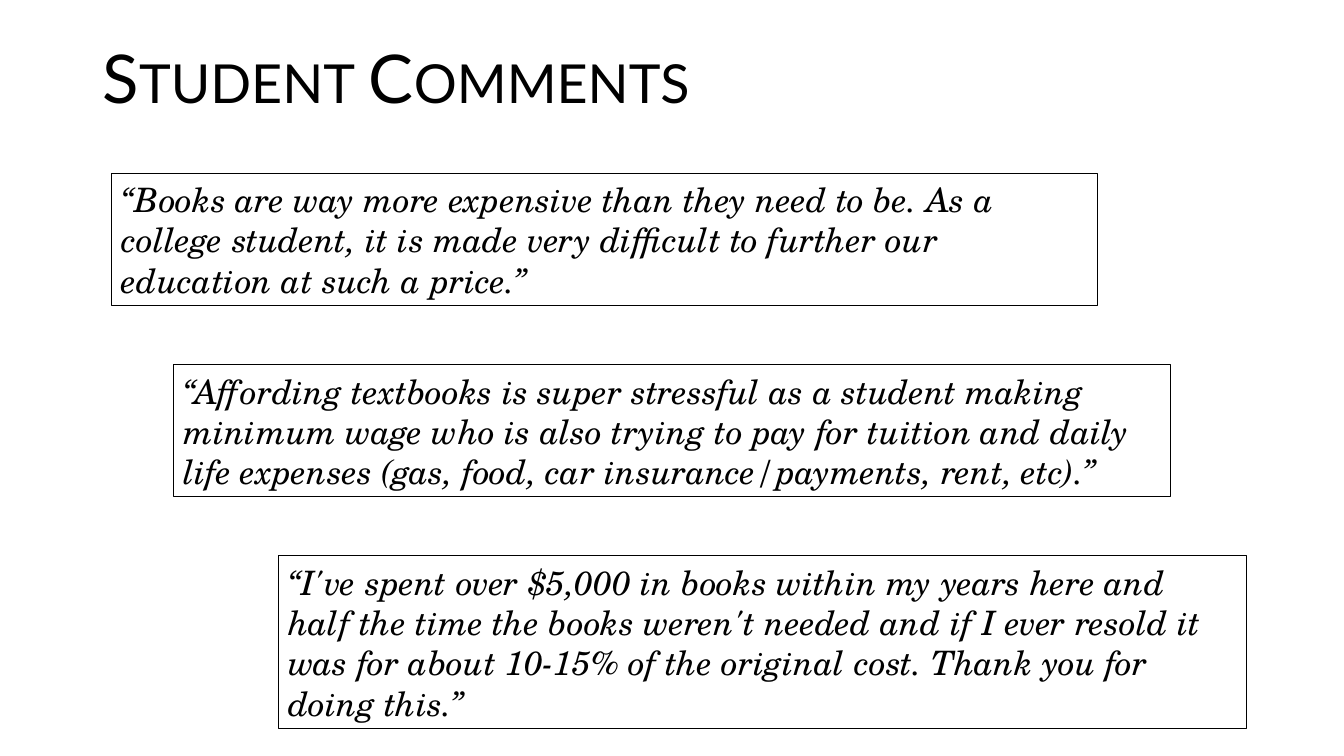
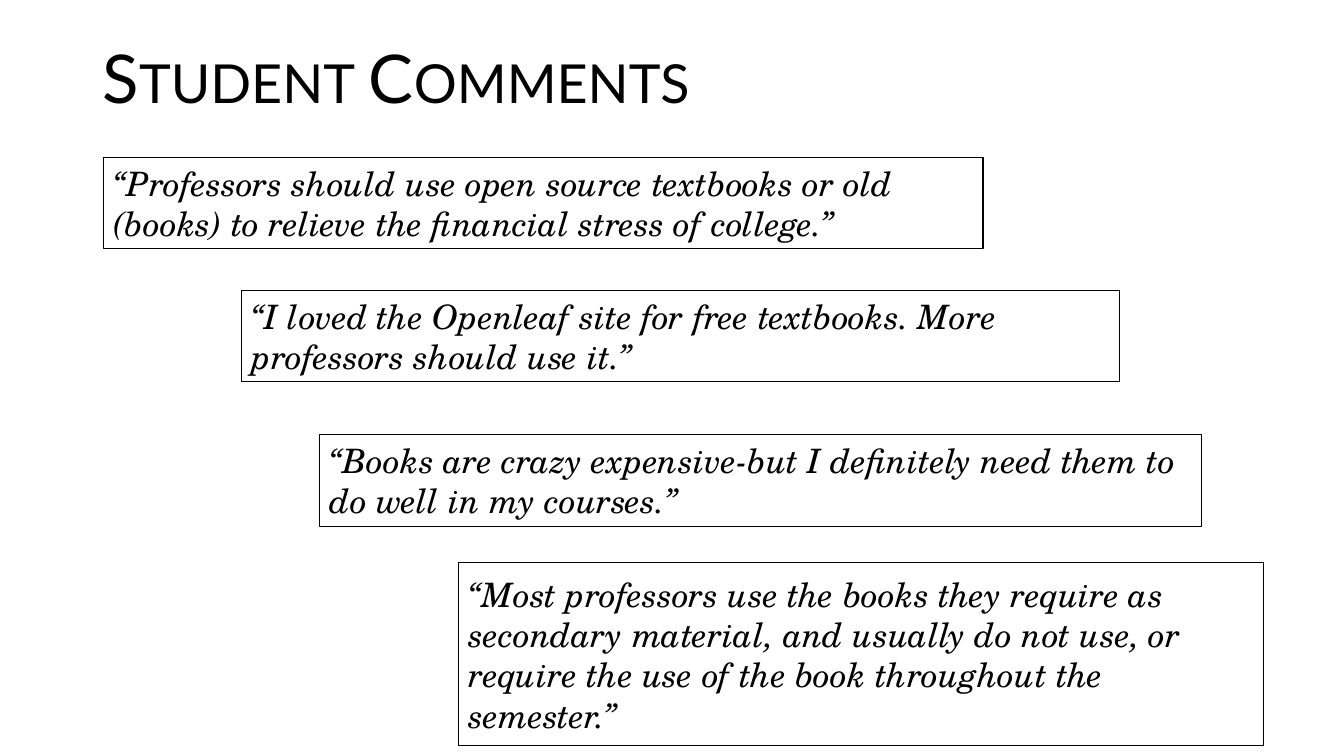
import pptx
import pptx.util
import pptx.dml.color
import pptx.enum.shapes
import pptx.enum.text

Inches = pptx.util.Inches
Pt = pptx.util.Pt
ANCHOR = pptx.enum.text.MSO_ANCHOR
BLACK = pptx.dml.color.RGBColor(0, 0, 0)
HEAD_FONT = "Lato"
QUOTE_FONT = "TeX Gyre Schola"
HEAD_BOX = (0.92, 0.4, 11.5, 1.45)
HEADING = "Student Comments"

# Each quote: left, top, width, height, text
FIRST = [
    (1.11, 1.72, 9.78, 1.31,
     "“Books are way more expensive than they need to be. As a college "
     "student, it is made very difficult to further our education at such "
     "a price.”"),
    (1.72, 3.62, 9.89, 1.31,
     "“Affording textbooks is super stressful as a student making minimum "
     "wage who is also trying to pay for tuition and daily life expenses "
     "(gas, food, car insurance/payments, rent, etc).”"),
    (2.76, 5.51, 9.6, 1.72,
     "“I've spent over $5,000 in books within my years here and half the "
     "time the books weren't needed and if I ever resold it was for about "
     "10-15% of the original cost. Thank you for doing this.”"),
]
SECOND = [
    (1.03, 1.56, 8.72, 0.91,
     "“Professors should use open source textbooks or old (books) to "
     "relieve the financial stress of college.”"),
    (2.4, 2.88, 8.7, 0.91,
     "“I loved the Openleaf site for free textbooks. More professors "
     "should use it.”"),
    (3.17, 4.31, 8.75, 0.91,
     "“Books are crazy expensive-but I definitely need them to do well in "
     "my courses.”"),
    (4.55, 5.58, 7.98, 1.82,
     "“Most professors use the books they require as secondary material, "
     "and usually do not use, or require the use of the book throughout "
     "the semester.”"),
]


def write(shape, text, font, size, italic=False, caps=False, space=1.0,
          anchor=ANCHOR.TOP):
    """Set the text of a shape, left-aligned and wrapped."""
    frame = shape.text_frame
    frame.word_wrap = True
    frame.vertical_anchor = anchor
    para = frame.paragraphs[0]
    para.alignment = pptx.enum.text.PP_ALIGN.LEFT
    para.line_spacing = space
    run = para.add_run()
    run.text = text
    run.font.name = font
    run.font.size = Pt(size)
    run.font.italic = italic
    run.font.color.rgb = BLACK
    if caps:
        run._r.get_or_add_rPr().set("cap", "small")


def add_head(slide, box):
    shape = slide.shapes.add_textbox(*map(Inches, box))
    write(shape, HEADING, HEAD_FONT, 48, caps=True, space=0.9)


def add_quote(slide, box, text):
    shape = slide.shapes.add_shape(
        pptx.enum.shapes.MSO_SHAPE.RECTANGLE, *map(Inches, box))
    shape.shadow.inherit = False
    shape.fill.background()
    shape.line.color.rgb = BLACK
    shape.line.width = Pt(0.75)
    write(shape, text, QUOTE_FONT, 24, italic=True, anchor=ANCHOR.MIDDLE)


def add_page(deck, quotes):
    slide = deck.slides.add_slide(deck.slide_layouts[6])
    add_head(slide, HEAD_BOX)
    for *box, text in quotes:
        add_quote(slide, box, text)


def main():
    deck = pptx.Presentation()
    deck.slide_width = Inches(13.33)
    deck.slide_height = Inches(7.5)
    for quotes in (FIRST, SECOND):
        add_page(deck, quotes)
    deck.save("out.pptx")


if __name__ == "__main__":
    main()
